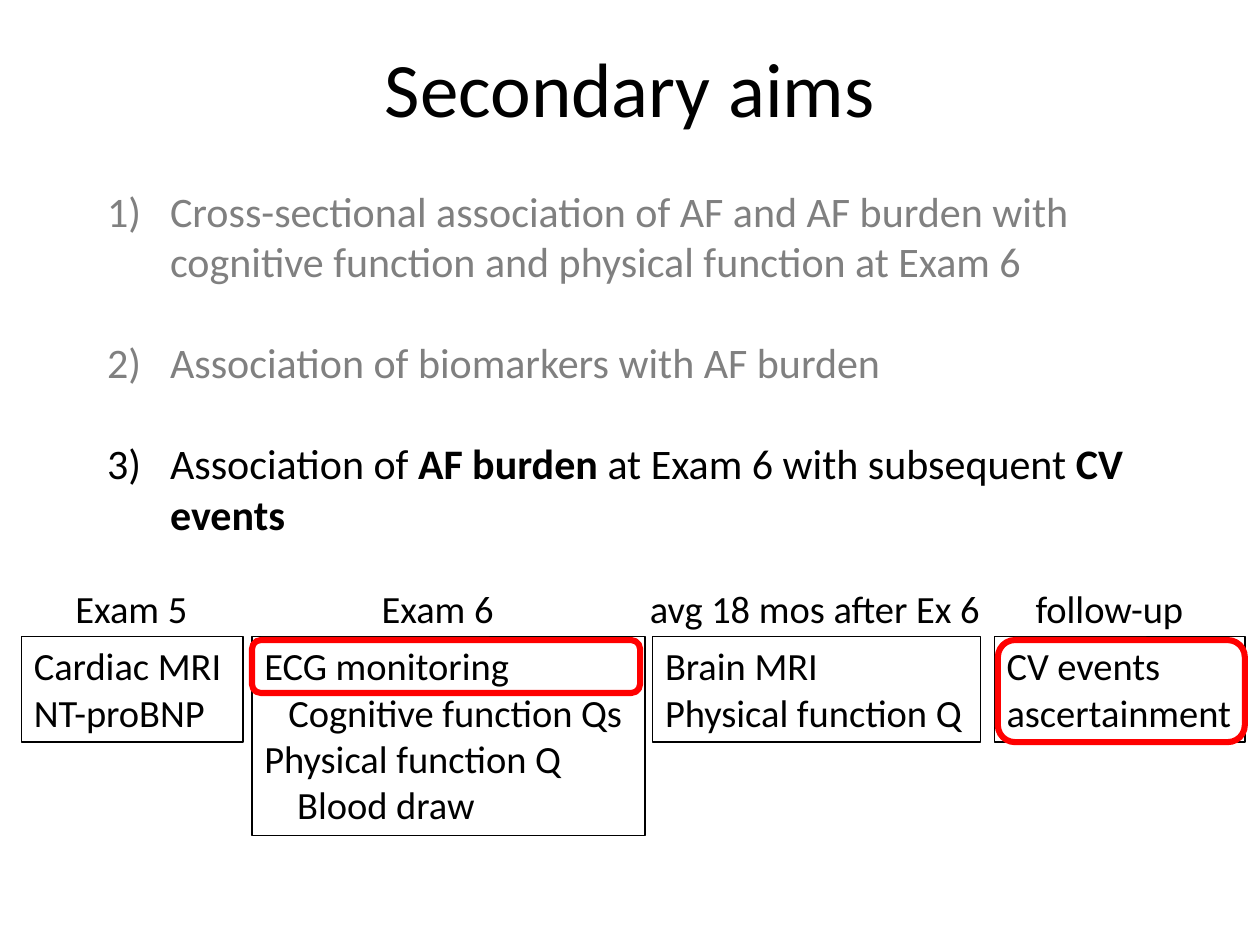
from dataclasses import dataclass
from typing import Any

from lxml.etree import SubElement
from pptx import Presentation
from pptx.dml.color import RGBColor
from pptx.enum.shapes import MSO_SHAPE
from pptx.enum.text import MSO_ANCHOR, MSO_AUTO_SIZE, PP_ALIGN
from pptx.oxml.ns import qn
from pptx.util import Inches, Pt

COLORS = {"text": "000000", "muted": "808080", "accent": "FF0000"}
COLS, ROWS = 40, 30


@dataclass
class Deck:
    """Draws styled elements on the current slide, measured in grid columns and rows."""
    prs: Any
    s: Any
    font: str = "Calibri"
    size: float = 22

    def area(self, col, row, cols, rows):
        w, h = self.prs.slide_width / COLS, self.prs.slide_height / ROWS
        return [round(n) for n in (col * w, row * h, cols * w, rows * h)]

    def place(self, sp, area):
        sp.left, sp.top, sp.width, sp.height = self.area(*area)

    def run(self, p, text, size=None, color="text", bold=False):
        r = p.add_run()
        r.text = text
        r.font.name = self.font
        r.font.size = Pt(size or self.size)
        r.font.bold = bold
        r.font.color.rgb = RGBColor.from_string(COLORS[color])

    def paragraphs(self, tf, items):
        for i, item in enumerate(items):
            yield (tf.add_paragraph() if i else tf.paragraphs[0]), item

    def indent(self, p, left, first=0):
        pPr = p._p.get_or_add_pPr()
        pPr.set("marL", str(Inches(left)))
        pPr.set("indent", str(Inches(first)))
        return pPr

    def title(self, area, text):
        sp = self.s.shapes.title
        self.place(sp, area)
        tf = sp.text_frame
        tf.vertical_anchor = MSO_ANCHOR.MIDDLE
        tf.auto_size = MSO_AUTO_SIZE.NONE
        tf.paragraphs[0].alignment = PP_ALIGN.CENTER
        self.run(tf.paragraphs[0], text, 44)

    def numbered(self, area, items, size=24, gap=29):
        sp = self.s.placeholders[1]
        self.place(sp, area)
        tf = sp.text_frame
        tf.auto_size = MSO_AUTO_SIZE.NONE
        for i, (p, (color, runs)) in enumerate(self.paragraphs(tf, items)):
            p.space_before = Pt(gap if i else 0)
            pPr = self.indent(p, 1, -0.5)
            SubElement(pPr, qn("a:buFont"), typeface="+mj-lt")
            SubElement(pPr, qn("a:buAutoNum"), type="arabicParenR")
            for text, bold in runs:
                self.run(p, text, size, color, bold)

    def outline(self, kind, area, color, width):
        sp = self.s.shapes.add_shape(kind, *self.area(*area))
        sp.shadow.inherit = False
        sp.fill.background()
        sp.line.color.rgb = RGBColor.from_string(COLORS[color])
        sp.line.width = Pt(width)
        return sp

    def box(self, area, items):
        tf = self.outline(MSO_SHAPE.RECTANGLE, area, "text", 0.75).text_frame
        tf.word_wrap = True
        tf.vertical_anchor = MSO_ANCHOR.TOP
        for p, (text, left, first) in self.paragraphs(tf, items):
            p.alignment = PP_ALIGN.LEFT
            self.indent(p, left, first)
            self.run(p, text)

    def highlight(self, area):
        self.outline(MSO_SHAPE.ROUNDED_RECTANGLE, area, "accent", 3.5)

    def tabbed(self, area, labels, stops):
        tf = self.s.shapes.add_textbox(*self.area(*area)).text_frame
        tf.word_wrap = True
        p = tf.paragraphs[0]
        tabs = SubElement(p._p.get_or_add_pPr(), qn("a:tabLst"))
        for stop in stops:
            SubElement(tabs, qn("a:tab"), pos=str(Inches(stop)), algn="l")
        self.run(p, "\t".join(labels))


def main():
    prs = Presentation()
    prs.slide_width, prs.slide_height = Inches(10), Inches(7.5)
    deck = Deck(prs, prs.slides.add_slide(prs.slide_layouts[1]))

    deck.title((2, 1.12, 36, 3.24), "Secondary aims")
    deck.numbered((1, 5.68, 37.68, 11.72), [
        ("muted", [("Cross-sectional association of AF and AF burden with "
                    "cognitive function and physical function at Exam 6", False)]),
        ("muted", [("Association of biomarkers with AF burden", False)]),
        ("text", [("Association of ", False), ("AF burden", True),
                  (" at Exam 6 with subsequent ", False), ("CV events", True)]),
    ])

    top, short = 20.2, 3.36
    boxes = [
        (0.68, 7.04, short, [("Cardiac MRI", 0, 0), ("NT-proBNP", 0, 0)]),
        (8, 12.48, 6.32, [("ECG monitoring", 0.19, -0.19),
                          ("Cognitive function Qs", 0.19, 0),
                          ("Physical function Q", 0.26, -0.26),
                          ("Blood draw", 0.26, 0)]),
        (20.72, 10.4, short, [("Brain MRI", 0, 0), ("Physical function Q", 0, 0)]),
        (31.56, 7.96, short, [("CV events ascertainment", 0, 0)]),
    ]
    for col, cols, rows, items in boxes:
        deck.box((col, top, cols, rows), items)
    deck.tabbed((2, 18.36, 36.76, 1.88),
                ["Exam 5", "Exam 6", "avg 18 mos after Ex 6", "follow-up"],
                [2.43, 4.56, 7.62])
    for col, cols, rows in [(8, 12.32, 1.68), (31.68, 7.84, 3.24)]:
        deck.highlight((col, top + 0.12, cols, rows))

    prs.save("out.pptx")


if __name__ == "__main__":
    main()
